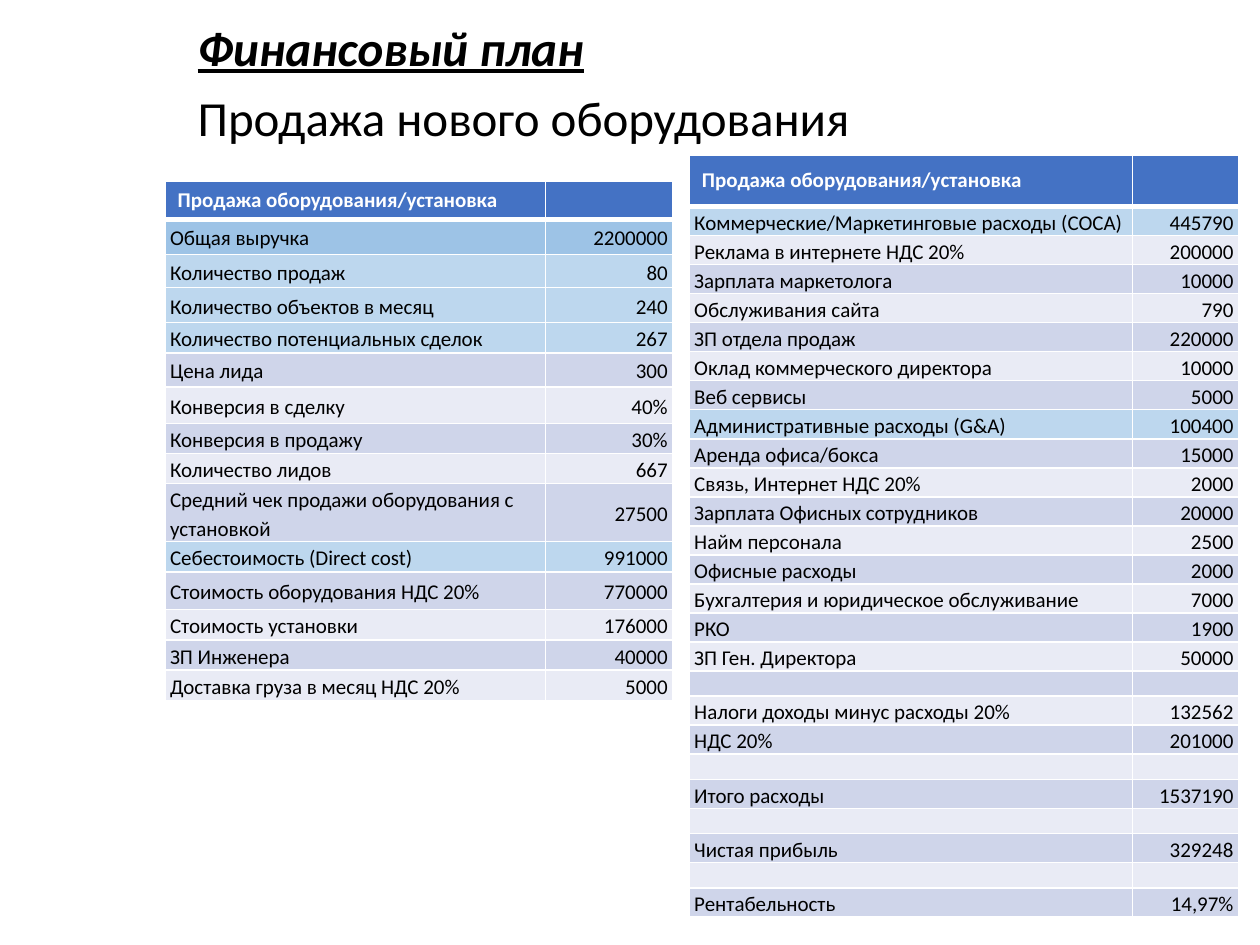
from pptx import Presentation
from pptx.dml.color import RGBColor as Rgb
from pptx.enum.text import MSO_ANCHOR as Anchor, PP_ALIGN as Align
from pptx.oxml import parse_xml
from pptx.oxml.ns import nsdecls
from pptx.util import Inches, Pt

BLACK = Rgb(0x00, 0x00, 0x00)
WHITE = Rgb(0xFF, 0xFF, 0xFF)
HEADER = Rgb(0x44, 0x72, 0xC4)
REVENUE = Rgb(0x9D, 0xC3, 0xE6)
GROUP = Rgb(0xBD, 0xD7, 0xEE)
BANDS = (Rgb(0xE9, 0xEB, 0xF5), Rgb(0xCF, 0xD5, 0xEA))

COLUMNS, ROWS = 100, 75
HEADING = "Продажа оборудования/установка"

SALES = [
    (HEADING, ""),
    ("Общая выручка", "2200000"),
    ("Количество продаж", "80"),
    ("Количество объектов в месяц", "240"),
    ("Количество потенциальных сделок", "267"),
    ("Цена лида", "300"),
    ("Конверсия в сделку", "40%"),
    ("Конверсия в продажу", "30%"),
    ("Количество лидов", "667"),
    ("Средний чек продажи оборудования с установкой", "27500"),
    ("Себестоимость (Direct cost)", "991000"),
    ("Стоимость оборудования НДС 20%", "770000"),
    ("Стоимость установки", "176000"),
    ("ЗП Инженера", "40000"),
    ("Доставка груза в месяц НДС 20%", "5000"),
]
SALES_HEIGHTS = [2.5, 2.8, 2.6, 2.8, 2.4, 2.7, 2.9, 2.4, 2.4, 2.2, 2.4, 3, 2.4, 2.4, 2.4]
SALES_ACCENTS = {1: REVENUE, 2: GROUP, 3: GROUP, 4: GROUP, 10: GROUP}

EXPENSES = [
    (HEADING, ""),
    ("Коммерческие/Маркетинговые расходы (COCA)", "445790"),
    ("Реклама в интернете НДС 20%", "200000"),
    ("Зарплата маркетолога", "10000"),
    ("Обслуживания сайта", "790"),
    ("ЗП отдела продаж", "220000"),
    ("Оклад коммерческого директора", "10000"),
    ("Веб сервисы", "5000"),
    ("Административные расходы (G&A)", "100400"),
    ("Аренда офиса/бокса", "15000"),
    ("Связь, Интернет НДС 20%", "2000"),
    ("Зарплата Офисных сотрудников", "20000"),
    ("Найм персонала", "2500"),
    ("Офисные расходы", "2000"),
    ("Бухгалтерия и юридическое обслуживание", "7000"),
    ("РКО", "1900"),
    ("ЗП Ген. Директора", "50000"),
    ("", ""),
    ("Налоги доходы минус расходы 20%", "132562"),
    ("НДС 20%", "201000"),
    ("", ""),
    ("Итого расходы", "1537190"),
    ("", ""),
    ("Чистая прибыль", "329248"),
    ("", ""),
    ("Рентабельность", "14,97%"),
]
EXPENSE_HEIGHTS = [4.1] + [2] * (len(EXPENSES) - 1)
EXPENSE_ACCENTS = {1: GROUP, 8: GROUP}


class FinanceSlide:
    font_name = "Calibri"
    title_size = Pt(28)
    table_size = Pt(12)

    def __init__(self, deck):
        self.slide = deck.slides.add_slide(deck.slide_layouts[6])
        self.column = deck.slide_width / COLUMNS
        self.row = deck.slide_height / ROWS

    def place(self, left, top, width, height):
        return (int(left * self.column), int(top * self.row),
                int(width * self.column), int(height * self.row))

    def style(self, paragraph, size, color, bold=False):
        font = paragraph.font
        font.name, font.size, font.bold = self.font_name, size, bold
        font.color.rgb = color
        return font

    def title(self, lines, *area):
        frame = self.slide.shapes.add_textbox(*self.place(*area)).text_frame
        frame.word_wrap = True
        frame.text = "\n".join(lines)
        for index, paragraph in enumerate(frame.paragraphs):
            first = index == 0
            paragraph.line_spacing = 0.9
            paragraph.space_before = Pt(0 if first else 10)
            properties = paragraph._p.get_or_add_pPr()
            properties.set("marL", str(Inches(0.2)))
            properties.set("indent", str(Inches(0.19)))
            font = self.style(paragraph, self.title_size, BLACK, first)
            font.italic = font.underline = first

    def borders(self, cell, top, bottom):
        for side, width in (("L", 1), ("R", 1), ("T", top), ("B", bottom)):
            cell._tc.get_or_add_tcPr().append(parse_xml(
                f'<a:ln{side} {nsdecls("a")} w="{Pt(width)}"><a:solidFill>'
                f'<a:srgbClr val="{WHITE}"/></a:solidFill></a:ln{side}>'))

    def cell(self, cell, text, row, is_value, fill):
        header = row == 0
        self.borders(cell, 3 if row == 1 else 1, 3 if header else 1)
        cell.fill.solid()
        cell.fill.fore_color.rgb = fill
        cell.vertical_anchor = Anchor.MIDDLE
        cell.text = text
        paragraph = cell.text_frame.paragraphs[0]
        if not header:
            cell.margin_left = cell.margin_right = Inches(0.04)
            cell.margin_top = cell.margin_bottom = 0
            paragraph.line_spacing = 1.15
        paragraph.alignment = Align.RIGHT if is_value else Align.LEFT
        self.style(paragraph, self.table_size, WHITE if header else BLACK, header)
        if not text:
            paragraph._p.get_or_add_endParaRPr().set("sz", str(self.table_size.centipoints))

    def table(self, entries, left, top, widths, heights, accents):
        area = self.place(left, top, sum(widths), sum(heights))
        table = self.slide.shapes.add_table(len(entries), len(widths), *area).table
        for column, width in zip(table.columns, widths):
            column.width = int(width * self.column)
        for row, (entry, height) in enumerate(zip(entries, heights)):
            table.rows[row].height = int(height * self.row)
            fill = HEADER if row == 0 else accents.get(row, BANDS[row % 2])
            for column, text in enumerate(entry):
                self.cell(table.cell(row, column), text, row, column == 1, fill)


def main():
    deck = Presentation()
    deck.slide_width, deck.slide_height = Inches(10), Inches(7.5)
    plan = FinanceSlide(deck)
    plan.title(["Финансовый план", "Продажа нового оборудования"], 10.8, 1.4, 86.2, 65)
    plan.table(SALES, 13.1, 14.4, (30.2, 10.1), SALES_HEIGHTS, SALES_ACCENTS)
    plan.table(EXPENSES, 54.7, 12.3, (35.2, 8.4), EXPENSE_HEIGHTS, EXPENSE_ACCENTS)
    deck.save("out.pptx")


if __name__ == "__main__":
    main()
